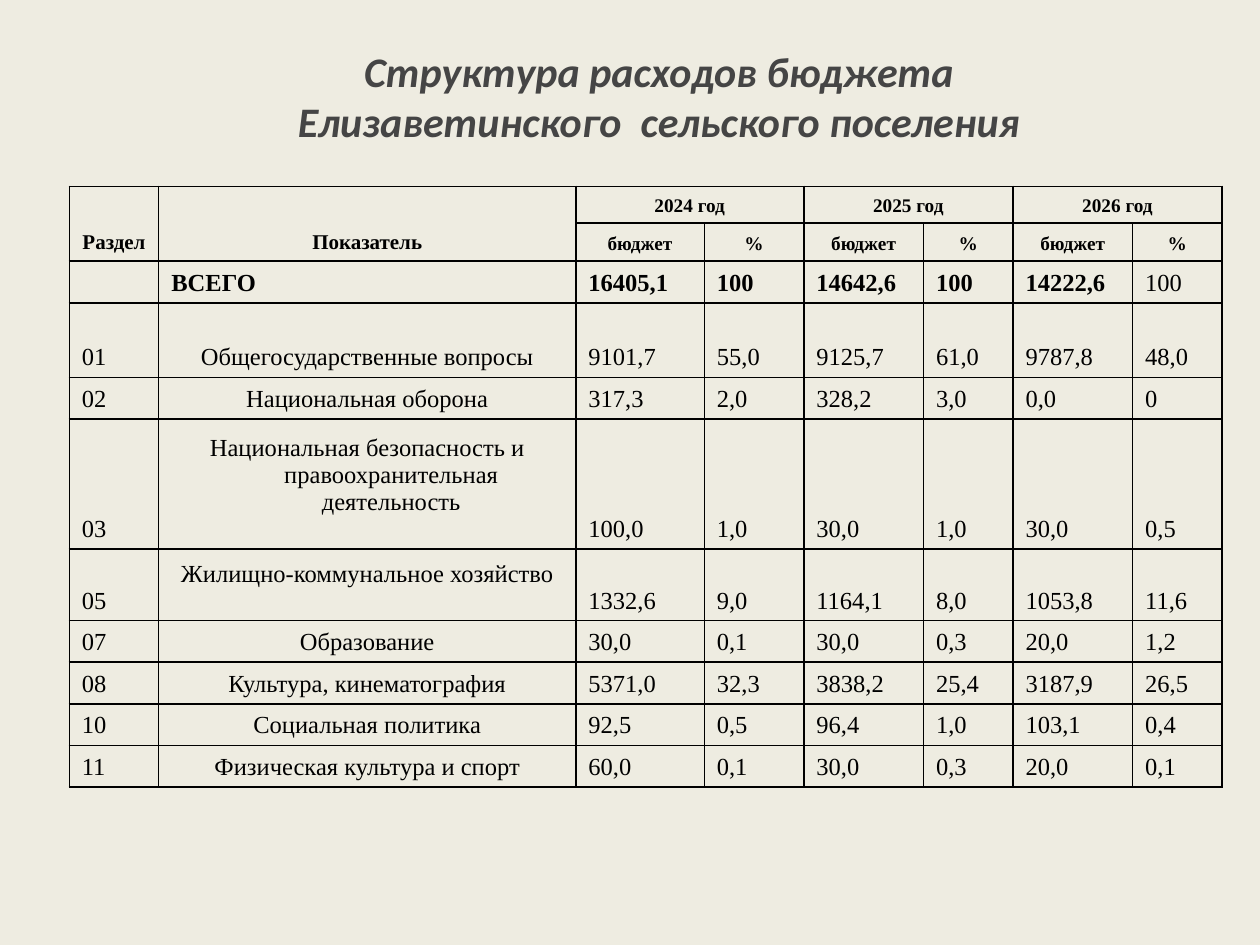
import pptx
import pptx.util
import pptx.dml.color
import pptx.enum.text
import pptx.oxml.ns
import lxml.etree

Inches = pptx.util.Inches
Pt = pptx.util.Pt
ALIGN = pptx.enum.text.PP_ALIGN
ANCHOR = pptx.enum.text.MSO_ANCHOR
qn = pptx.oxml.ns.qn

COLORS = {"back": "EEECE1", "title": "454545", "text": "000000", "line": "000000"}
TITLE = "Структура расходов бюджета\vЕлизаветинского  сельского поселения"
WIDTHS = [0.71, 3.31, 1.02, 0.79, 0.95, 0.71, 0.95, 0.71]
HEIGHTS = [0.29, 0.3, 0.33, 0.59, 0.33, 1.03, 0.57] + [0.33] * 4
YEARS = ["2024 год", "2025 год", "2026 год"]
HEADS = [
    ["Раздел", "Показатель"] + [text for year in YEARS for text in (year, "")],
    ["", ""] + ["бюджет", "%"] * len(YEARS),
]
ROWS = [
    ["", "ВСЕГО", "16405,1", "100", "14642,6", "100", "14222,6", "100"],
    ["01", "Общегосударственные вопросы", "9101,7", "55,0", "9125,7", "61,0", "9787,8", "48,0"],
    ["02", "Национальная оборона", "317,3", "2,0", "328,2", "3,0", "0,0", "0"],
    ["03", "Национальная безопасность и правоохранительная деятельность",
     "100,0", "1,0", "30,0", "1,0", "30,0", "0,5"],
    ["05", "Жилищно-коммунальное хозяйство", "1332,6", "9,0", "1164,1", "8,0", "1053,8", "11,6"],
    ["07", "Образование", "30,0", "0,1", "30,0", "0,3", "20,0", "1,2"],
    ["08", "Культура, кинематография", "5371,0", "32,3", "3838,2", "25,4", "3187,9", "26,5"],
    ["10", "Социальная политика", "92,5", "0,5", "96,4", "1,0", "103,1", "0,4"],
    ["11", "Физическая культура и спорт", "60,0", "0,1", "30,0", "0,3", "20,0", "0,1"],
]
RAISED = {"03", "05"}
TITLE_FONT = {"name": "Calibri", "size": Pt(24), "bold": True, "italic": True}
CELL_BOX = {
    "vertical_anchor": ANCHOR.BOTTOM,
    "margin_left": Inches(0.1), "margin_right": Inches(0.1),
    "margin_top": Inches(0.05), "margin_bottom": Inches(0.05),
}


def apply(item, values):
    for name, value in values.items():
        setattr(item, name, value)


def paint(font, name):
    font.color.rgb = pptx.dml.color.RGBColor.from_string(COLORS[name])


def add_edges(cell):
    props = cell._tc.get_or_add_tcPr()
    for index, side in enumerate(("lnL", "lnR", "lnT", "lnB")):
        line = lxml.etree.Element(qn("a:" + side), w=str(Pt(1)))
        fill = lxml.etree.SubElement(line, qn("a:solidFill"))
        lxml.etree.SubElement(fill, qn("a:srgbClr"), val=COLORS["line"])
        props.insert(index, line)


def fill_cell(cell, text, size, bold, align):
    apply(cell, CELL_BOX)
    cell.fill.background()
    add_edges(cell)
    para = cell.text_frame.paragraphs[0]
    para.alignment = align
    props = para._p.get_or_add_pPr()
    props.set("marL", str(Inches(0.38)))
    props.set("indent", str(-Inches(0.38)))
    if text:
        run = para.add_run()
        run.text = text
        apply(run.font, {"name": "Times New Roman", "size": Pt(size), "bold": bold})
        paint(run.font, "text")
    else:
        lxml.etree.SubElement(para._p, qn("a:endParaRPr"), sz=str(size * 100))


def add_title(slide, box):
    title = slide.shapes.title
    apply(title, dict(zip(("left", "top", "width", "height"), box)))
    frame = title.text_frame
    frame.text = TITLE
    apply(frame, {
        "word_wrap": True, "auto_size": pptx.enum.text.MSO_AUTO_SIZE.NONE,
        "vertical_anchor": ANCHOR.TOP, "margin_top": Inches(0.08),
    })
    para = frame.paragraphs[0]
    para.alignment = ALIGN.CENTER
    for run in para.runs:
        apply(run.font, TITLE_FONT)
        paint(run.font, "title")


def add_budget(slide, box):
    table = slide.shapes.add_table(len(HEIGHTS), len(WIDTHS), *box).table
    apply(table, {"first_row": False, "horz_banding": False})
    for column, width in zip(table.columns, WIDTHS):
        column.width = Inches(width)
    for row, height in zip(table.rows, HEIGHTS):
        row.height = Inches(height)
    for r, texts in enumerate(HEADS):
        for c, text in enumerate(texts):
            size = 12 if c < 2 else 11
            fill_cell(table.cell(r, c), text, size, True, ALIGN.CENTER)
    for r, texts in enumerate(ROWS, len(HEADS)):
        total = r == len(HEADS)
        for c, text in enumerate(texts):
            align = ALIGN.CENTER if c == 1 and not total else ALIGN.LEFT
            bold = total and c < len(WIDTHS) - 1
            fill_cell(table.cell(r, c), text, 14, bold, align)
        if texts[0] in RAISED:
            table.cell(r, 1).margin_bottom = Inches(0.26)
    for c in range(2):
        table.cell(0, c).merge(table.cell(1, c))
    for c in range(2, len(WIDTHS), 2):
        table.cell(0, c).merge(table.cell(0, c + 1))


def main():
    deck = pptx.Presentation()
    apply(deck, {"slide_width": Inches(10), "slide_height": Inches(7.5)})
    slide = deck.slides.add_slide(deck.slide_layouts[5])
    fill = slide.background.fill
    fill.solid()
    fill.fore_color.rgb = pptx.dml.color.RGBColor.from_string(COLORS["back"])
    add_title(slide, [Inches(n) for n in (0.98, 0.28, 8.5, 1.25)])
    add_budget(slide, [Inches(n) for n in (0.55, 1.48, sum(WIDTHS), sum(HEIGHTS))])
    deck.save("out.pptx")


if __name__ == "__main__":
    main()
